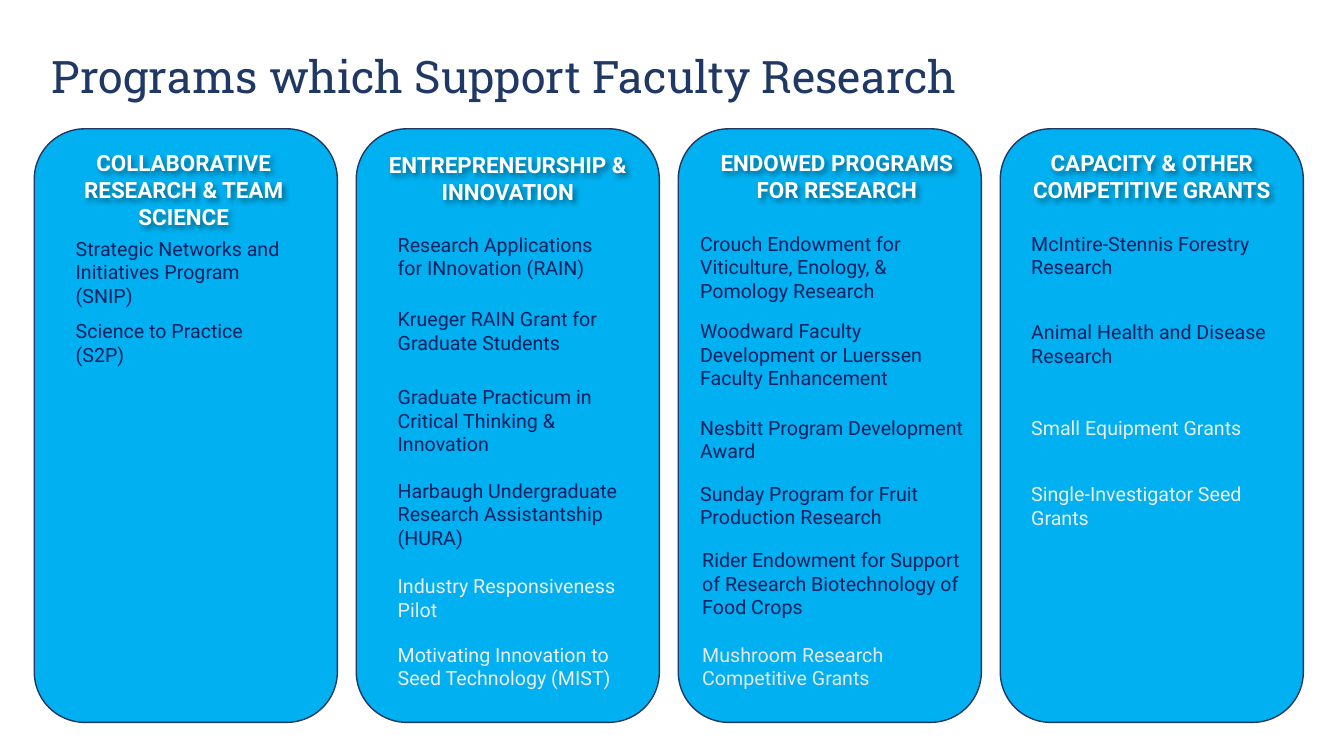
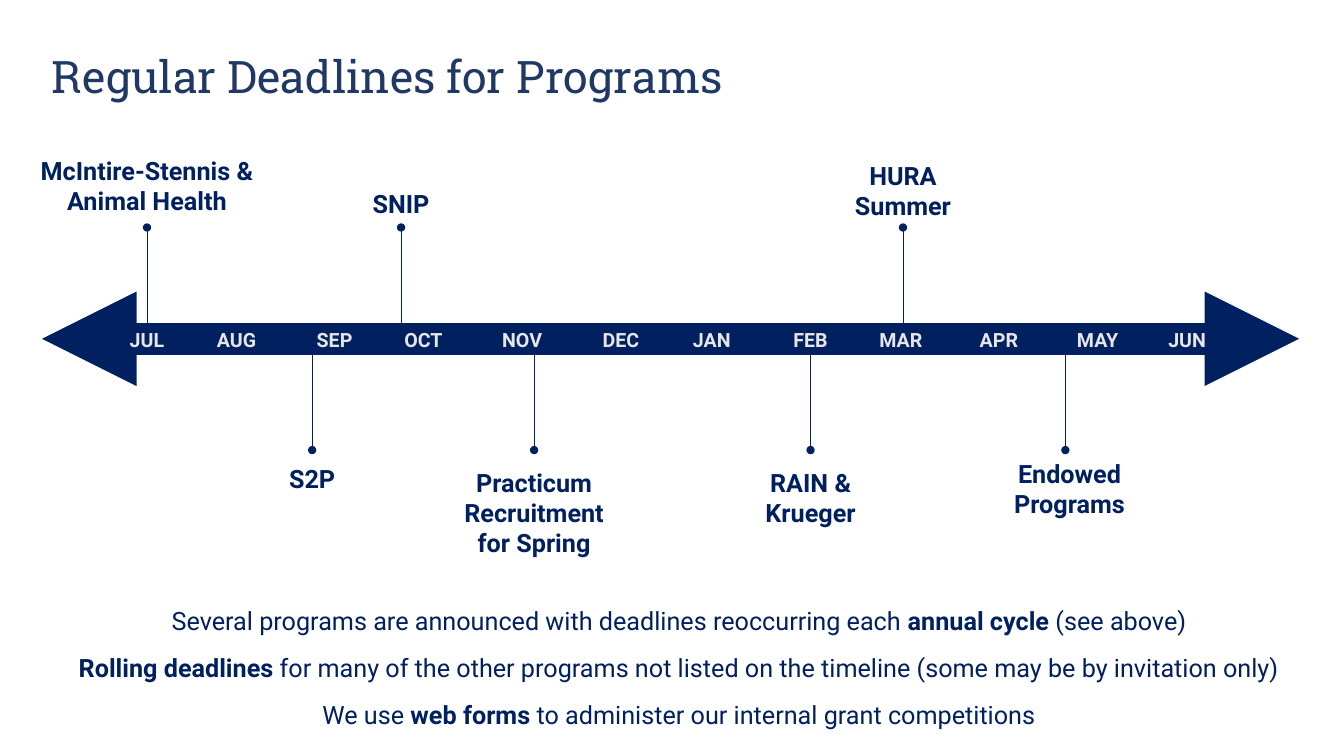
import dataclasses

import lxml.etree
import pptx
import pptx.dml.color
import pptx.enum.shapes
import pptx.enum.text
import pptx.oxml
import pptx.oxml.ns
import pptx.util

Pt = pptx.util.Pt
ALIGN = pptx.enum.text.PP_ALIGN
COLORS = {
    "title": "203864",
    "card": "00B0F0",
    "navy": "002060",
    "white": "FFFFFF",
    "pale": "EDEDED",
    "gray": "E7E6E6",
}
BODY_FONT = "Roboto"
TITLE_FONT = "Roboto Slab"
CARD_WIDTH, CARD_HEIGHT, CARD_STEP = 216.5, 424, 230
STEM_LENGTH, AXIS_GAP = 69.5, 10
MONTH_WIDTH = 47.5


@dataclasses.dataclass
class Program:
    """A program name, placed from the top of its card."""
    top: float
    lines: int
    text: str
    color: str = "navy"
    indent: float = 0


@dataclasses.dataclass
class Card:
    """A column heading box with the programs below it."""
    heading: str
    heading_left: float
    heading_top: float
    heading_width: float
    heading_lines: int
    text_left: float
    text_width: float
    programs: list


@dataclasses.dataclass
class Milestone:
    """A deadline, placed from the left end and axis of the timeline."""
    center: float
    label_top: float
    lines: int
    text: str
    width: float = 122.5
    shift: float = 0


CARDS = [
    Card("COLLABORATIVE RESEARCH & TEAM SCIENCE", 8.5, 11, 196.5, 3, 22.5, 172, [
        Program(73.5, 3, "Strategic Networks and Initiatives Program (SNIP)"),
        Program(132.5, 1, "Science to Practice (S2P)"),
    ]),
    Card("ENTREPRENEURSHIP & INNOVATION", 10, 12.5, 196.5, 2, 22.5, 172, [
        Program(70.5, 2, "Research Applications for INnovation (RAIN)"),
        Program(124, 2, "Krueger RAIN Grant for Graduate Students"),
        Program(179.5, 3, "Graduate Practicum in Critical Thinking & Innovation"),
        Program(246.5, 3, "Harbaugh Undergraduate Research Assistantship (HURA)"),
        Program(314.5, 2, "Industry Responsiveness Pilot", "pale"),
        Program(363.5, 2, "Motivating Innovation to Seed Technology (MIST)", "pale"),
    ]),
    Card("ENDOWED PROGRAMS FOR RESEARCH", 10, 11, 206.5, 2, 8.5, 206.5, [
        Program(70, 3, "Crouch Endowment for Viticulture, Enology, & Pomology Research"),
        Program(132.5, 3, "Woodward Faculty Development or Luerssen Faculty Enhancement"),
        Program(201.5, 2, "Nesbitt Program Development Award"),
        Program(248.5, 2, "Sunday Program for Fruit Production Research"),
        Program(296, 3, "Rider Endowment for Support of Research Biotechnology of Food Crops",
                indent=1.5),
        Program(363.5, 2, "Mushroom Research Competitive Grants", "gray", 1.5),
    ]),
    Card("CAPACITY & OTHER COMPETITIVE GRANTS", 10, 11, 196.5, 2, 15, 185, [
        Program(70, 2, "McIntire-Stennis Forestry Research"),
        Program(133, 2, "Animal Health and Disease Research"),
        Program(201.5, 1, "Small Equipment Grants", "pale"),
        Program(249, 2, "Single-Investigator Seed Grants", "pale"),
    ]),
]
MONTHS = {
    "JUL": 75, "AUG": 139, "SEP": 209, "OCT": 272.5, "NOV": 343, "DEC": 413.5,
    "JAN": 478.5, "FEB": 549, "MAR": 613.5, "APR": 683.5, "MAY": 754, "JUN": 818,
}
MILESTONES = [
    Milestone(75, -134.5, 2, "McIntire-Stennis & Animal Health", 168.5),
    Milestone(193, 85.5, 1, "S2P"),
    Milestone(256.5, -111, 1, "SNIP"),
    Milestone(351.5, 88, 3, "Practicum Recruitment for Spring"),
    Milestone(549, 88, 2, "RAIN & Krueger"),
    Milestone(615, -131, 2, "HURA Summer"),
    Milestone(731, 82, 2, "Endowed Programs", shift=3),
]
NOTES = [
    [("Several programs are announced with deadlines reoccurring each ", False),
     ("annual cycle ", True), ("(see above)", False)],
    [("Rolling deadlines ", True),
     ("for many of the other programs not listed on the timeline "
      "(some may be by invitation only)", False)],
    [("We use ", False), ("web forms", True),
     (" to administer our internal grant competitions", False)],
]


def rgb(name):
    """Return the named colour."""
    return pptx.dml.color.RGBColor.from_string(COLORS[name])


def add_text(slide, left, top, width, lines, paragraphs, size, color,
             font=BODY_FONT, align=ALIGN.LEFT, space_after=0):
    """Add a text box sized for its line count; paragraphs hold (text, bold) runs."""
    height = 7.2 + 1.2 * size * lines + space_after * (len(paragraphs) - 1)
    shape = slide.shapes.add_textbox(Pt(left), Pt(top), Pt(width), Pt(height))
    frame = shape.text_frame
    frame.word_wrap = True
    frame.auto_size = pptx.enum.text.MSO_AUTO_SIZE.SHAPE_TO_FIT_TEXT
    for index, runs in enumerate(paragraphs):
        paragraph = frame.add_paragraph() if index else frame.paragraphs[0]
        paragraph.alignment = align
        paragraph.space_after = Pt(space_after)
        for text, bold in runs:
            run = paragraph.add_run()
            run.text = text
            run.font.name = font
            run.font.size = Pt(size)
            run.font.bold = bold
            run.font.color.rgb = rgb(color)
    return shape


def add_text_shadow(shape):
    """Give the letters of an unfilled text box a soft shadow."""
    shape._element.spPr.append(pptx.oxml.parse_xml(
        f'<a:effectLst {pptx.oxml.ns.nsdecls("a")}>'
        '<a:outerShdw blurRad="50800" dist="38100" dir="2700000" algn="tl" rotWithShape="0">'
        '<a:srgbClr val="000000"><a:alpha val="40000"/></a:srgbClr>'
        '</a:outerShdw></a:effectLst>'))


def add_line(slide, start, end, width, ends):
    """Add a navy straight line with the given end marks."""
    connector = slide.shapes.add_connector(
        pptx.enum.shapes.MSO_CONNECTOR.STRAIGHT, *(Pt(value) for value in start + end))
    connector.line.width = Pt(width)
    connector.line.color.rgb = rgb("navy")
    properties = connector._element.spPr
    line = properties.find(pptx.oxml.ns.qn("a:ln"))
    for tag, kind in ends.items():
        lxml.etree.SubElement(line, pptx.oxml.ns.qn(f"a:{tag}"), type=kind)
    lxml.etree.SubElement(properties, pptx.oxml.ns.qn("a:effectLst"))


def add_titled_slide(presentation, title):
    """Add a blank slide with the shared title style."""
    slide = presentation.slides.add_slide(presentation.slide_layouts[6])
    add_text(slide, 30, 31, 824.5, 1, [[(title, False)]], 32, "title", TITLE_FONT)
    return slide


def add_card(slide, left, top, card):
    """Add one rounded card with its heading and programs."""
    shape = slide.shapes.add_shape(
        pptx.enum.shapes.MSO_SHAPE.ROUNDED_RECTANGLE,
        Pt(left), Pt(top), Pt(CARD_WIDTH), Pt(CARD_HEIGHT))
    shape.shadow.inherit = False
    shape.fill.solid()
    shape.fill.fore_color.rgb = rgb("card")
    shape.line.color.rgb = rgb("title")
    shape.line.width = Pt(1)
    heading = add_text(
        slide, left + card.heading_left, top + card.heading_top, card.heading_width,
        card.heading_lines, [[(card.heading, True)]], 16, "white", align=ALIGN.CENTER)
    add_text_shadow(heading)
    for program in card.programs:
        add_text(slide, left + card.text_left + program.indent, top + program.top,
                 card.text_width, program.lines, [[(program.text, False)]], 14, program.color)


def add_milestone(slide, left, axis, milestone):
    """Add a stem with a dot and its deadline label, above or below the axis."""
    center = left + milestone.center
    side = 1 if milestone.label_top > 0 else -1
    start = axis + side * AXIS_GAP
    add_line(slide, (center, start), (center, start + side * STEM_LENGTH), 0.5,
             {"tailEnd": "oval"})
    add_text(slide, center + milestone.shift - milestone.width / 2,
             axis + milestone.label_top, milestone.width, milestone.lines,
             [[(milestone.text, True)]], 18, "navy", align=ALIGN.CENTER)


def add_timeline(slide, left, axis, width):
    """Add the double arrow, its months and its deadlines."""
    add_line(slide, (left, axis), (left + width, axis), 22.5,
             {"headEnd": "triangle", "tailEnd": "triangle"})
    for month, center in MONTHS.items():
        add_text(slide, left + center - MONTH_WIDTH / 2, axis - 11, MONTH_WIDTH, 1,
                 [[(month, True)]], 14, "gray", align=ALIGN.CENTER)
    for milestone in MILESTONES:
        add_milestone(slide, left, axis, milestone)


def build_programs(presentation):
    """Build the slide of program cards."""
    slide = add_titled_slide(presentation, "Programs which Support Faculty Research")
    for index, card in enumerate(CARDS):
        add_card(slide, 24.5 + index * CARD_STEP, 92, card)


def build_deadlines(presentation):
    """Build the slide with the deadline timeline and notes."""
    slide = add_titled_slide(presentation, "Regular Deadlines for Programs")
    add_timeline(slide, 30, 242, 898)
    add_text(slide, 39, 428.5, 892, 3, NOTES, 18, "navy",
             align=ALIGN.CENTER, space_after=12)


def main():
    """Build and save the presentation."""
    presentation = pptx.Presentation()
    presentation.slide_width = Pt(960)
    presentation.slide_height = Pt(540)
    build_programs(presentation)
    build_deadlines(presentation)
    presentation.save("out.pptx")


if __name__ == "__main__":
    main()
